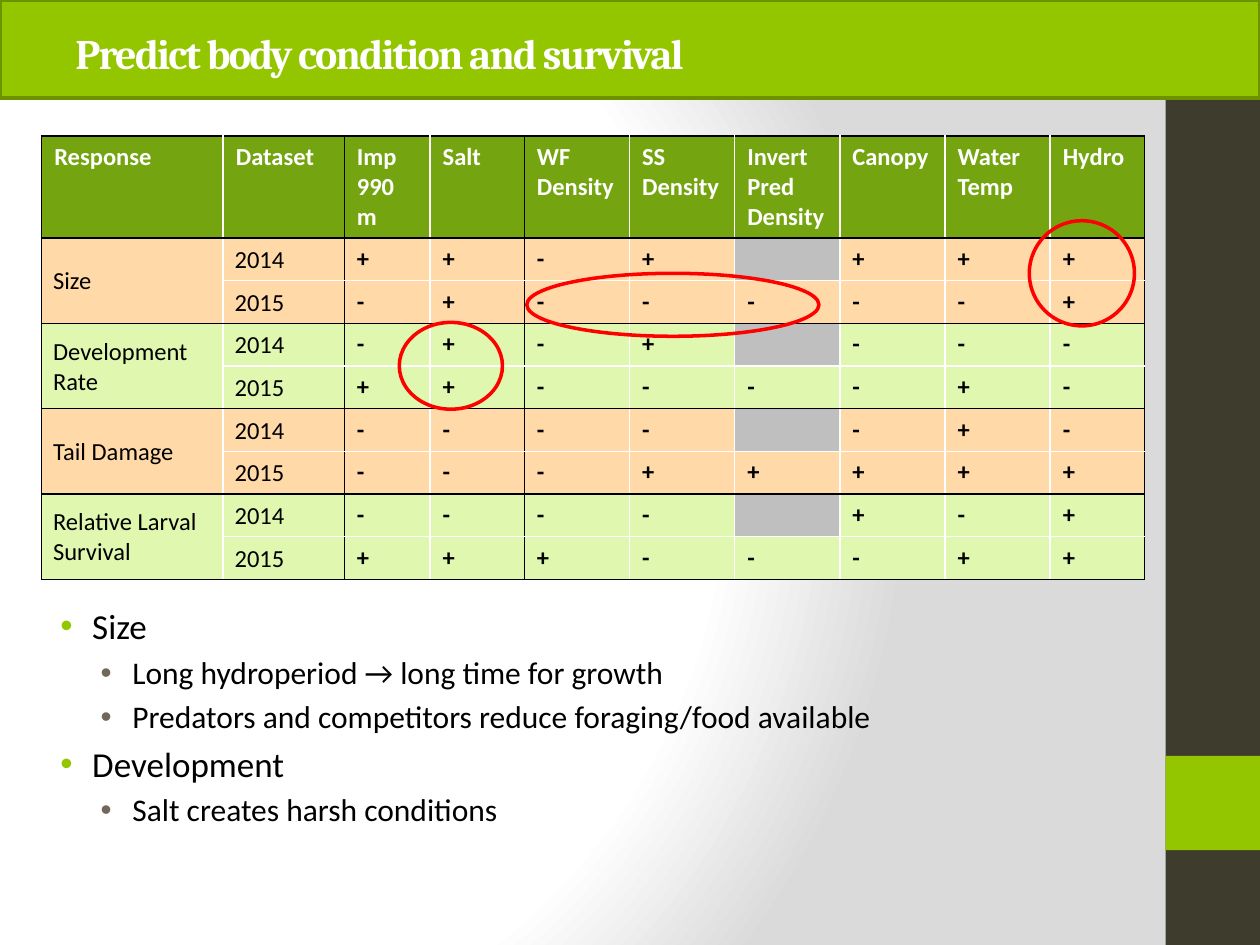
import pptx
import pptx.util
import pptx.dml.color
import pptx.enum.shapes
import pptx.enum.text
import pptx.oxml
import pptx.oxml.ns

Cm, Pt = pptx.util.Cm, pptx.util.Pt
kinds = pptx.enum.shapes.MSO_SHAPE
middle = pptx.enum.text.MSO_ANCHOR.MIDDLE
space = pptx.oxml.ns.nsdecls("a")
hues = {"lime": "94C600", "edge": "6D9200", "dark": "3E3D2D", "head": "74A510",
        "peach": "FFD9A7", "mint": "DFF7AE", "grey": "BFBFBF", "red": "FF0000",
        "brown": "71685A", "white": "FFFFFF", "black": "000000", "mist": "DADADA"}


def style(font, hue, **form):
    for key, val in form.items():
        setattr(font, key, val)
    font.color.rgb = pptx.dml.color.RGBColor.from_string(hues[hue])


def draw(kind, spot, fill=None, line=None):
    shape = slide.shapes.add_shape(kind, *map(Cm, spot))
    shape.shadow.inherit = False
    for part, hue in ((shape.fill, fill), (shape.line.fill, line)):
        if hue:
            part.solid()
            part.fore_color.rgb = pptx.dml.color.RGBColor.from_string(hues[hue])
        else:
            part.background()
    if line:
        shape.line.width = Pt(2)


deck = pptx.Presentation()
deck.slide_width, deck.slide_height = Cm(25.4), Cm(19.05)
slide = deck.slides.add_slide(deck.slide_layouts[6])

# Background glow
slide.background.fill.solid()
back = slide.element.xpath(".//p:bgPr")[0]
stops = "".join(f'<a:gs pos="{pos}"><a:srgbClr val="{hues[hue]}"/></a:gs>'
                for pos, hue in ((0, "white"), (75000, "white"), (100000, "mist")))
back.replace(back[0], pptx.oxml.parse_xml(
    f'<a:gradFill {space} rotWithShape="1"><a:gsLst>{stops}</a:gsLst><a:path path="circle">'
    '<a:fillToRect l="20000" t="50000" r="100000" b="50000"/></a:path></a:gradFill>'))

# Side band
draw(kinds.RECTANGLE, (23.5, 0, 1.9, 19.05), "dark")
draw(kinds.RECTANGLE, (23.5, 15.24, 1.9, 1.9), "lime")

# Table of signs: one group of two years per response, blank means no data
heads = ["Response", "Dataset", "Imp 990 m", "Salt", "WF Density", "SS Density",
         "Invert Pred Density", "Canopy", "Water Temp", "Hydro"]
groups = [("Size", "++-+ +++", "-+-----+"),
          ("Development Rate", "-+-+ ---", "++----+-"),
          ("Tail Damage", "---- -+-", "---+++++"),
          ("Relative Larval Survival", "---- +-+", "+++---++")]
rows = [heads]
for name, first, next_ in groups:
    rows += [[name, "2014", *first], ["", "2015", *next_]]
wide = [3.66, 2.44, 1.73, 1.9] + [2.12] * 5 + [1.9]
high = [2.04] + [0.86] * 8
table = slide.shapes.add_table(len(rows), len(wide), Cm(0.84), Cm(2.74),
                               Cm(sum(wide)), Cm(sum(high))).table
for col, size in zip(table.columns, wide):
    col.width = Cm(size)
for row, size in zip(table.rows, high):
    row.height = Cm(size)
for r in range(1, len(rows), 2):
    table.cell(r, 0).merge(table.cell(r + 1, 0))

for r, row in enumerate(rows):
    for c, text in enumerate(row):
        cell = table.cell(r, c)
        # Black frames each group of rows and columns, white splits the rest
        sides = {"L": c in (0, 2, 4), "R": c in (1, 3, 9),
                 "T": r == 0 or r % 2 == 1, "B": r % 2 == 0 or c == 0}
        for side, black in sides.items():
            hue = hues["black" if black else "white"]
            cell._tc.get_or_add_tcPr().append(pptx.oxml.parse_xml(
                f'<a:ln{side} {space} w="12700"><a:solidFill><a:srgbClr val="{hue}"/>'
                f'</a:solidFill></a:ln{side}>'))
        fill = "head" if r == 0 else ("peach", "mint")[(r - 1) // 2 % 2]
        if text == " ":
            fill = "grey"
            cell.margin_top = cell.margin_bottom = 0
        elif text:
            run = cell.text_frame.paragraphs[0].add_run()
            run.text = text
            style(run.font, "white" if r == 0 else "black", name="Calibri",
                  size=Pt(14), bold=r == 0 or c > 1)
        if r and c < 2:
            form = {"vertical_anchor": middle, "margin_left": Cm(0.23),
                    "margin_top": Cm(0.03), "margin_right": Cm(0.03), "margin_bottom": 0}
            for key, val in form.items():
                setattr(cell, key, val)
        cell.fill.solid()
        cell.fill.fore_color.rgb = pptx.dml.color.RGBColor.from_string(hues[fill])

# Title bar
draw(kinds.RECTANGLE, (0, 0, 25.4, 1.98), "lime", "edge")
frame = slide.shapes.add_textbox(Cm(1.27), Cm(-0.2), Cm(19.76), Cm(2.54)).text_frame
frame.word_wrap = True
frame.vertical_anchor = middle
run = frame.paragraphs[0].add_run()
run.text = "Predict body condition and survival"
style(run.font, "white", name="Cambria", size=Pt(24), bold=True)
run._r.get_or_add_rPr().set("spc", "-100")

# Bullet notes: level and text
notes = [(0, "Size"),
         (1, "Long hydroperiod → long time for growth"),
         (1, "Predators and competitors reduce foraging/food available"),
         (0, "Development"),
         (1, "Salt creates harsh conditions")]
looks = [(20, 0.97, "lime"), (18, 1.78, "brown")]
frame = slide.shapes.add_textbox(Cm(0.64), Cm(12.07), Cm(23.47), Cm(3.61)).text_frame
frame.word_wrap = True
for i, (level, text) in enumerate(notes):
    size, left, hue = looks[level]
    para = frame.add_paragraph() if i else frame.paragraphs[0]
    para.level = level
    para.space_before = Pt(size * 0.2)
    run = para.add_run()
    run.text = text
    style(run.font, "black", name="Calibri", size=Pt(size))
    props = para._p.get_or_add_pPr()
    props.set("marL", str(Cm(left)))
    props.set("indent", str(Cm(-0.64)))
    for mark in (f'<a:buClr {space}><a:srgbClr val="{hues[hue]}"/></a:buClr>',
                 f'<a:buFont {space} typeface="Arial"/>',
                 f'<a:buChar {space} char="•"/>'):
        props.append(pptx.oxml.parse_xml(mark))

# Red rings
for spot in ((20.75, 4.45, 2.12, 2.12), (10.62, 5.51, 5.89, 1.27), (8.05, 6.5, 2.08, 1.75)):
    draw(kinds.OVAL, spot, line="red")

deck.save("out.pptx")
